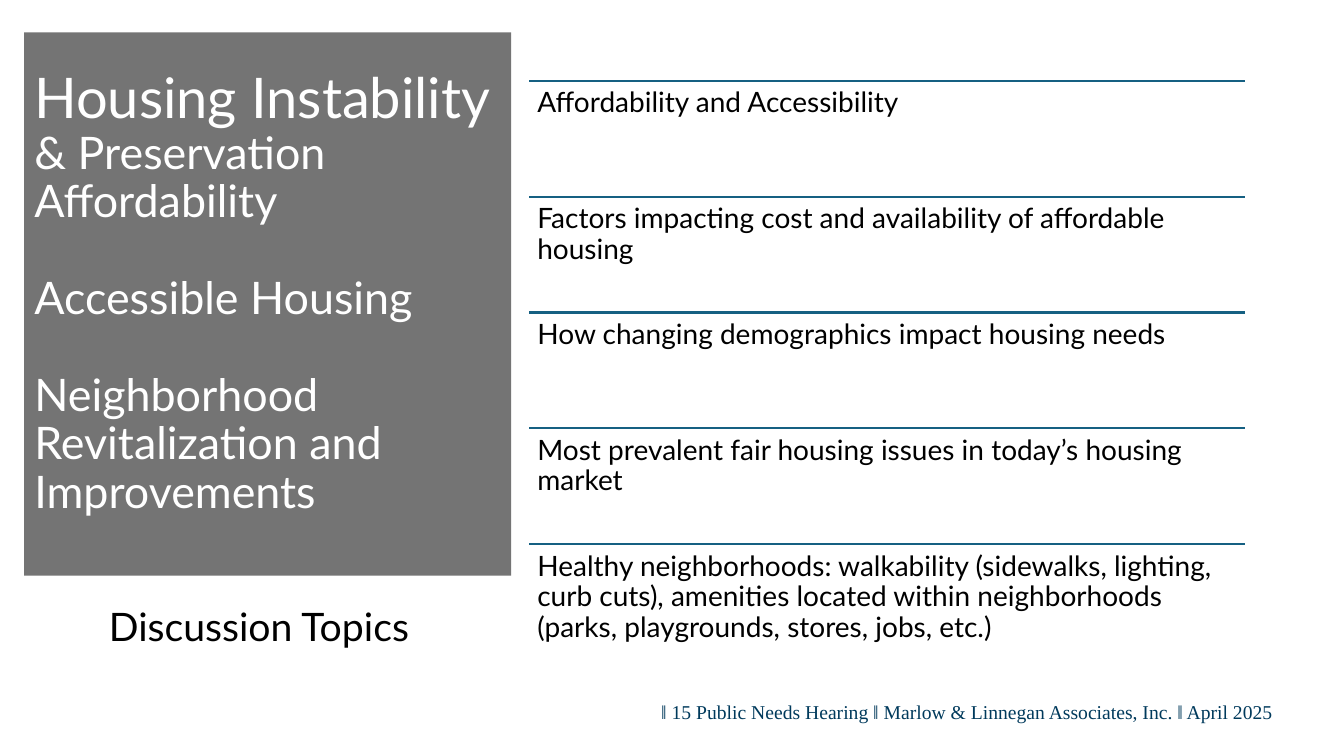
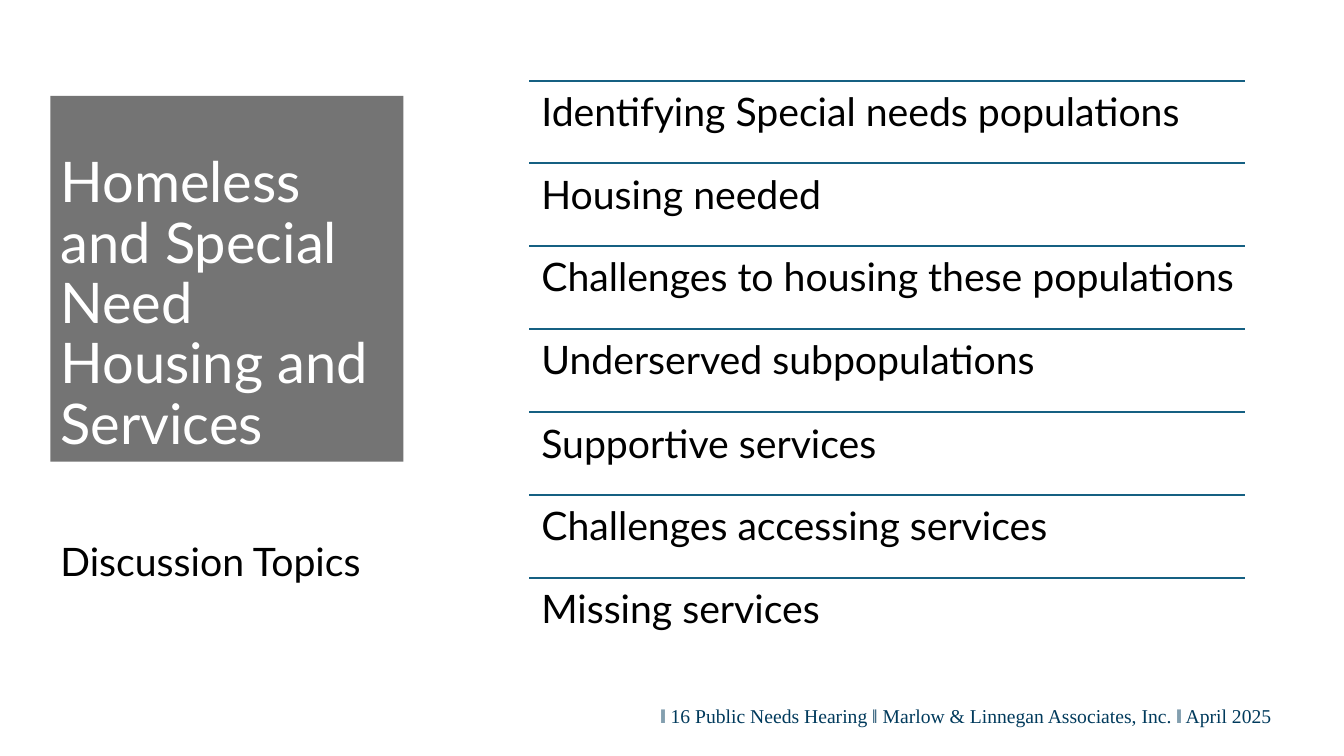
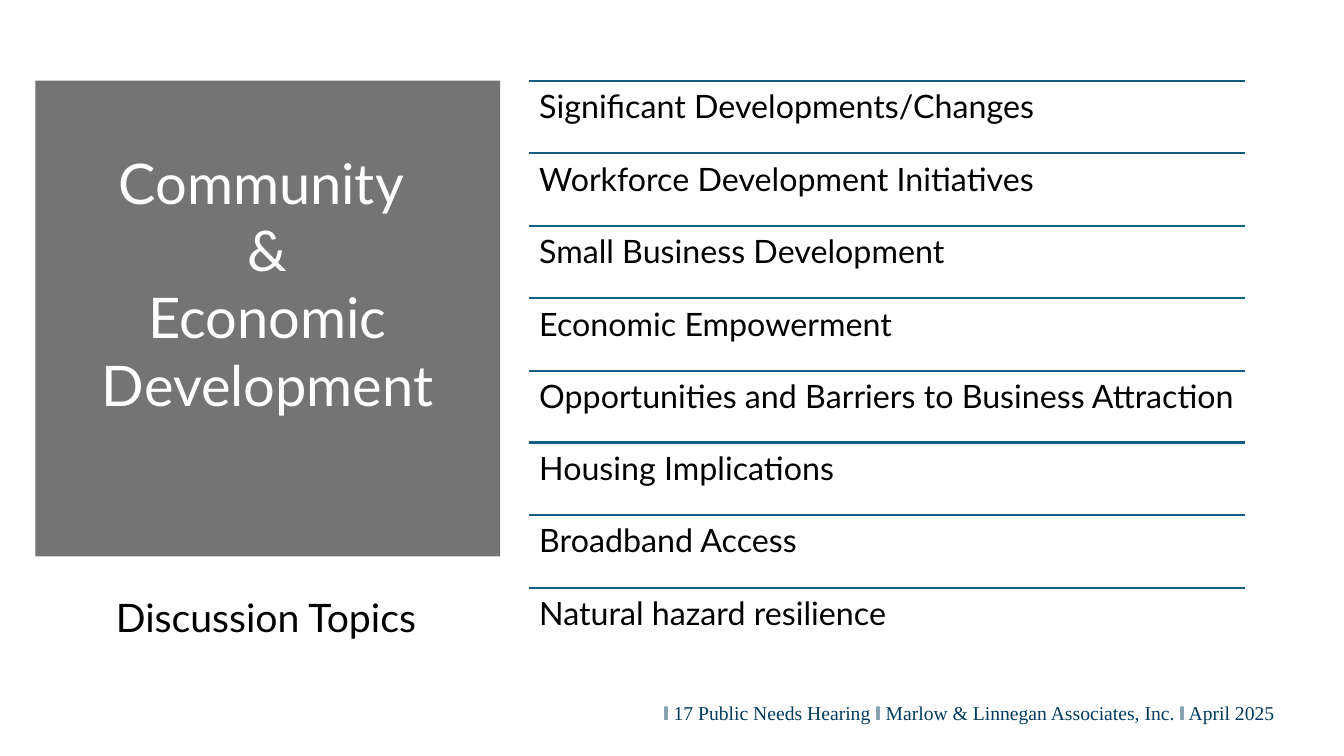
"""Builds the discussion-topic slides of the public needs hearing."""
from lxml import etree
from pptx import Presentation
from pptx import util as u
from pptx.dml.color import RGBColor
from pptx.enum import shapes, text
from pptx.oxml import ns

PX = 9144
COLORS = {"panel": "747474", "rule": "156082", "footer": "003A5C",
          "white": "FFFFFF", "black": "000000"}
FONT, FOOTER_FONT = "Lato", "Times New Roman"
LEFT, CENTER, RIGHT = text.PP_ALIGN.LEFT, text.PP_ALIGN.CENTER, text.PP_ALIGN.RIGHT
TOP, MIDDLE, BOTTOM = (text.MSO_ANCHOR.TOP, text.MSO_ANCHOR.MIDDLE,
                       text.MSO_ANCHOR.BOTTOM)
TOPICS_LEFT, TOPICS_TOP, TOPICS_WIDTH, TOPICS_HEIGHT = 525, 80, 710, 575
TOPIC_RIGHT_INSET = 4

HEARINGS = [
    dict(
        title=[[("Housing Instability ", 40), ("& Preservation Affordability", 32)],
               [("Accessible Housing", 32)],
               [("Neighborhood Revitalization and Improvements", 32)]],
        title_box=(24, 32, 483, 539),
        title_format=dict(gap=34.6, insets=(10, 5, 10, 57)),
        caption_box=(98, 598, 333, 108),
        footer_box=(226, 686, 1047, 40),
        topic_size=20, topic_inset=8,
        topics=["Affordability and Accessibility",
                "Factors impacting cost and availability of affordable housing",
                "How changing demographics impact housing needs",
                "Most prevalent fair housing issues in today’s housing market",
                "Healthy neighborhoods: walkability (sidewalks, lighting, curb cuts), "
                "amenities located within neighborhoods (parks, playgrounds, stores, "
                "jobs, etc.)"]),
    dict(
        title=["Homeless and Special Need Housing and Services"],
        title_box=(50, 95, 350, 363),
        title_format={},
        caption_box=(50, 533, 350, 156),
        footer_box=(225, 690, 1047, 40),
        topic_size=28, topic_inset=12,
        topics=["Identifying Special needs populations", "Housing needed",
                "Challenges to housing these populations",
                "Underserved subpopulations", "Supportive services",
                "Challenges accessing services", "Missing services"]),
    dict(
        title=["Community ", "&", "Economic Development"],
        title_box=(35, 80, 461, 472),
        title_format=dict(align=CENTER, spacing=1.0, insets=(10, 5, 10, 138)),
        caption_box=(105, 589, 350, 81),
        footer_box=(228, 687, 1047, 40),
        topic_size=23, topic_inset=10,
        topics=["Significant Developments/Changes",
                "Workforce Development Initiatives", "Small Business Development",
                "Economic Empowerment",
                "Opportunities and Barriers to Business Attraction",
                "Housing Implications", "Broadband Access",
                "Natural hazard resilience"]),
]


def emu(*lengths):
    """Turn px lengths into EMU."""
    return [u.Emu(length * PX) for length in lengths]


def rgb(name):
    """Look up a colour of the deck."""
    return RGBColor.from_string(COLORS[name])


def write(holder, paragraphs, size=28, color="black", font=FONT, align=LEFT,
          anchor=TOP, spacing=0.9, before=0, gap=0, insets=(10, 5, 10, 5)):
    """Fill a shape with paragraphs, each a string or a list of (text, size) runs."""
    frame = holder.text_frame
    frame.word_wrap = True
    frame.auto_size = text.MSO_AUTO_SIZE.NONE
    frame.vertical_anchor = anchor
    (frame.margin_left, frame.margin_top,
     frame.margin_right, frame.margin_bottom) = emu(*insets)
    for index, content in enumerate(paragraphs):
        paragraph = frame.add_paragraph() if index else frame.paragraphs[0]
        paragraph.alignment = align
        paragraph.line_spacing = spacing
        paragraph.space_before = u.Pt(gap if index else before)
        runs = [(content, size)] if isinstance(content, str) else content
        for words, points in runs:
            run = paragraph.add_run()
            run.text = words
            run.font.name = font
            run.font.size = u.Pt(points)
            run.font.color.rgb = rgb(color)


def place(holder, box):
    """Move and size a placeholder."""
    holder.left, holder.top, holder.width, holder.height = emu(*box)


def add_title(slide, paragraphs, box, **style):
    """Put the title on its grey panel."""
    title = slide.shapes.title
    place(title, box)
    title.fill.solid()
    title.fill.fore_color.rgb = rgb("panel")
    write(title, paragraphs, **{"size": 40, "color": "white", "anchor": BOTTOM, **style})


def add_caption(slide, box):
    """Put the unbulleted caption below the title."""
    caption = slide.placeholders[1]
    place(caption, box)
    write(caption, ["Discussion Topics"], before=10)
    properties = caption.text_frame.paragraphs[0]._p.get_or_add_pPr()
    properties.set("marL", "0")
    properties.set("indent", "0")
    etree.SubElement(properties, ns.qn("a:buNone"))


def add_text(slide, words, box, **style):
    """Add a text box with one paragraph."""
    write(slide.shapes.add_textbox(*emu(*box)), [words], **style)


def add_rule(slide, left, top, width):
    """Draw a horizontal rule."""
    rule = slide.shapes.add_connector(shapes.MSO_CONNECTOR.STRAIGHT,
                                      *emu(left, top, left + width, top))
    rule.line.color.rgb = rgb("rule")
    rule.line.width = u.Pt(1.5)
    etree.SubElement(rule._element.spPr, ns.qn("a:effectLst"))


def add_topics(slide, topics, size, inset):
    """Stack the topics in equal rows, each under a rule."""
    pitch = TOPICS_HEIGHT / len(topics)
    for index, topic in enumerate(topics):
        top = round(TOPICS_TOP + index * pitch)
        add_rule(slide, TOPICS_LEFT, top, TOPICS_WIDTH)
        add_text(slide, topic, (TOPICS_LEFT, top, TOPICS_WIDTH, round(pitch)),
                 size=size, insets=(inset, inset, TOPIC_RIGHT_INSET, inset))


def add_footer(slide, number, box):
    """Add the numbered footer line."""
    add_text(slide, f"‖ {number} Public Needs Hearing ‖ "
             "Marlow & Linnegan Associates, Inc. ‖ April 2025", box, size=14,
             color="footer", font=FOOTER_FONT, align=RIGHT, anchor=MIDDLE, spacing=1.0)


def main():
    """Build and save the deck."""
    deck = Presentation()
    deck.slide_width, deck.slide_height = emu(1333, 750)
    for number, hearing in enumerate(HEARINGS, start=15):
        slide = deck.slides.add_slide(deck.slide_layouts[1])
        add_title(slide, hearing["title"], hearing["title_box"],
                  **hearing["title_format"])
        add_topics(slide, hearing["topics"], hearing["topic_size"],
                   hearing["topic_inset"])
        add_caption(slide, hearing["caption_box"])
        add_footer(slide, number, hearing["footer_box"])
    deck.save("out.pptx")


if __name__ == "__main__":
    main()
